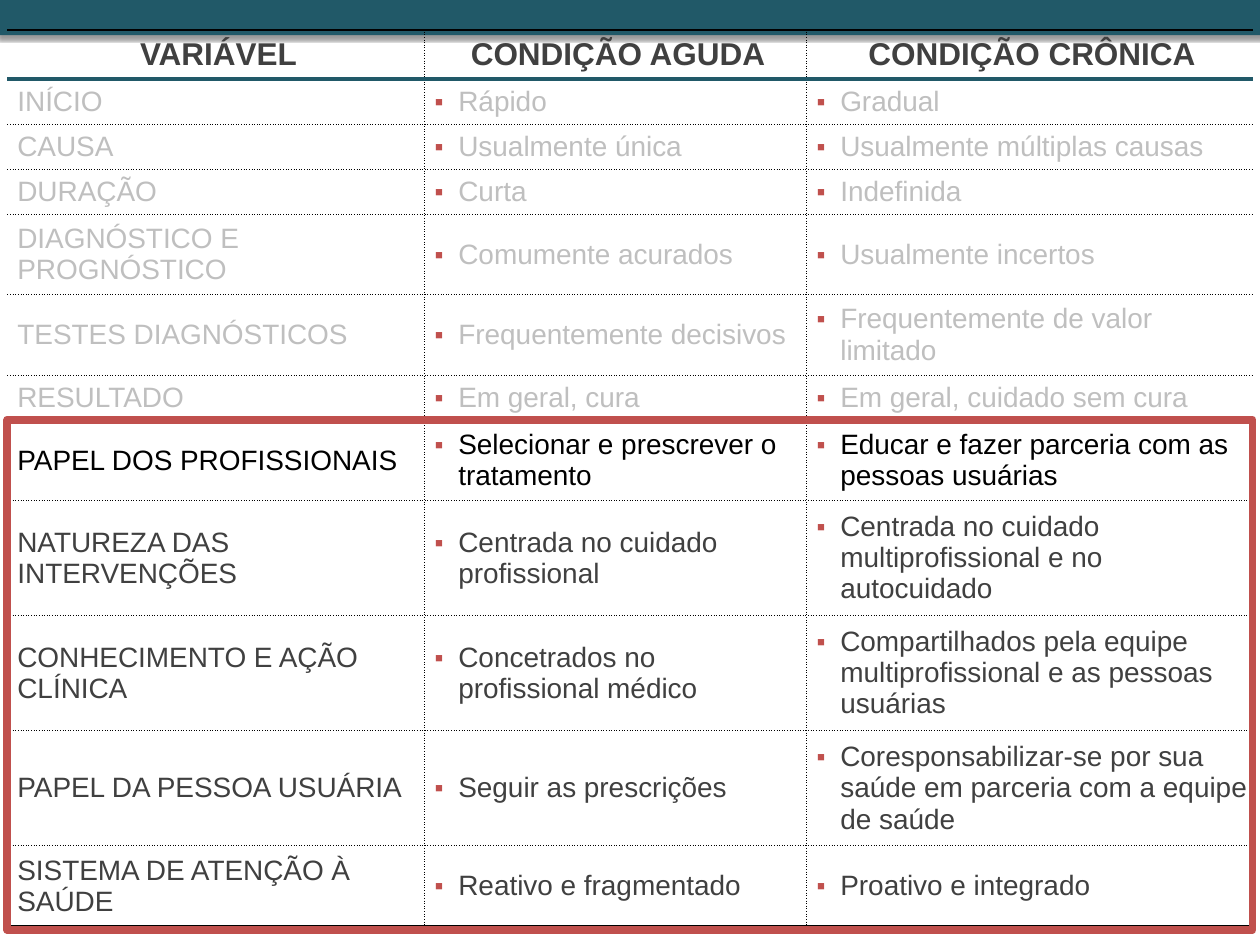
"""Build a slide comparing acute and chronic conditions in a highlighted table."""
from dataclasses import dataclass

from pptx import Presentation
from pptx.dml.color import RGBColor
from pptx.enum.shapes import MSO_SHAPE
from pptx.enum.text import MSO_ANCHOR, PP_ALIGN
from pptx.oxml import parse_xml
from pptx.oxml.ns import nsdecls
from pptx.util import Cm, Pt

TEAL = RGBColor(0x21, 0x59, 0x68)
RED = RGBColor(0xC0, 0x50, 0x4D)
BLACK = RGBColor(0x00, 0x00, 0x00)
DARK_GREY = RGBColor(0x40, 0x40, 0x40)
LIGHT_GREY = RGBColor(0xBF, 0xBF, 0xBF)

FONT = "Arial"
ONE_LINE, TWO_LINES, THREE_LINES = Cm(0.91), Cm(1.62), Cm(2.32)
COLUMN_WIDTHS = (Cm(8.41), Cm(7.7), Cm(8.99))
TABLE_LEFT, TABLE_TOP, TABLE_WIDTH = Cm(0.15), Cm(0.6), Cm(25.1)
BULLET_INDENT = Cm(0.48)


@dataclass(frozen=True)
class Edge:
    color: RGBColor
    width: Pt
    dash: str = "solid"


@dataclass(frozen=True)
class Row:
    variable: str
    acute: str
    chronic: str
    height: Cm = ONE_LINE
    color: RGBColor = DARK_GREY
    header: bool = False


DOTTED = Edge(BLACK, Pt(0.5), "sysDot")
OUTER = Edge(BLACK, Pt(1))
HEADER_RULE = Edge(TEAL, Pt(3))

ROWS = (
    Row("VARIÁVEL", "CONDIÇÃO AGUDA", "CONDIÇÃO CRÔNICA", Cm(0.99), header=True),
    Row("INÍCIO", "Rápido", "Gradual", color=LIGHT_GREY),
    Row("CAUSA", "Usualmente única", "Usualmente múltiplas causas", color=LIGHT_GREY),
    Row("DURAÇÃO", "Curta", "Indefinida", color=LIGHT_GREY),
    Row("DIAGNÓSTICO E PROGNÓSTICO", "Comumente acurados", "Usualmente incertos",
        TWO_LINES, LIGHT_GREY),
    Row("TESTES DIAGNÓSTICOS", "Frequentemente decisivos", "Frequentemente de valor limitado",
        TWO_LINES, LIGHT_GREY),
    Row("RESULTADO", "Em geral, cura", "Em geral, cuidado sem cura", color=LIGHT_GREY),
    Row("PAPEL DOS PROFISSIONAIS", "Selecionar e prescrever o tratamento",
        "Educar e fazer parceria com as pessoas usuárias", TWO_LINES, BLACK),
    Row("NATUREZA DAS INTERVENÇÕES", "Centrada no cuidado profissional",
        "Centrada no cuidado multiprofissional e no autocuidado", THREE_LINES),
    Row("CONHECIMENTO E AÇÃO CLÍNICA", "Concetrados no profissional médico",
        "Compartilhados pela equipe multiprofissional e as pessoas usuárias", THREE_LINES),
    Row("PAPEL DA PESSOA USUÁRIA", "Seguir as prescrições",
        "Coresponsabilizar-se por sua saúde em parceria com a equipe de saúde", THREE_LINES),
    Row("SISTEMA DE ATENÇÃO À SAÚDE", "Reativo e fragmentado", "Proativo e integrado", TWO_LINES),
)


def draw_rectangle(slide, left: Cm, top: Cm, width: Cm, height: Cm,
                   fill: RGBColor | None = None, edge: Edge | None = None):
    """Draw a rectangle with an optional fill and outline."""
    box = slide.shapes.add_shape(MSO_SHAPE.RECTANGLE, left, top, width, height)
    box.shadow.inherit = False
    if fill is None:
        box.fill.background()
    else:
        box.fill.solid()
        box.fill.fore_color.rgb = fill
    if edge is None:
        box.line.fill.background()
    else:
        box.line.color.rgb = edge.color
        box.line.width = edge.width
        box.line._get_or_add_ln().append(parse_xml(f"<a:round {nsdecls('a')}/>"))
    return box


def draw_top_band(slide) -> None:
    """Draw the shadowed band and its translucent upper strip."""
    band = draw_rectangle(slide, Cm(-0.05), Cm(0), Cm(25.5), Cm(0.71), TEAL)
    effects = band._element.spPr.find("{*}effectLst")
    effects.append(parse_xml(
        f'<a:outerShdw {nsdecls("a")} blurRad="{Pt(2)}" dist="{Pt(2)}" dir="5400000" rotWithShape="0">'
        f'<a:srgbClr val="{BLACK}"><a:alpha val="40000"/></a:srgbClr></a:outerShdw>'))
    strip = draw_rectangle(slide, Cm(0), Cm(0), Cm(25.4), Cm(0.51), TEAL)
    color = strip._element.spPr.find("{*}solidFill/{*}srgbClr")
    color.append(parse_xml(f'<a:alpha {nsdecls("a")} val="90000"/>'))


def write_text(frame, text: str, *, size: Pt, color: RGBColor, bold: bool = False,
               align: PP_ALIGN = PP_ALIGN.LEFT, bullet: bool = False) -> None:
    """Write one formatted paragraph into a text frame."""
    para = frame.paragraphs[0]
    para.alignment = align
    span = para.add_run()
    span.text = text
    span.font.name = FONT
    span.font.size = size
    span.font.bold = bold
    span.font.color.rgb = color
    if bullet:
        properties = para._p.get_or_add_pPr()
        properties.set("marL", str(BULLET_INDENT))
        properties.set("indent", str(-BULLET_INDENT))
        for markup in (f'<a:buClr {nsdecls("a")}><a:srgbClr val="{RED}"/></a:buClr>',
                       f'<a:buSzPct {nsdecls("a")} val="90000"/>',
                       f'<a:buFont {nsdecls("a")} typeface="{FONT}"/>',
                       f'<a:buChar {nsdecls("a")} char="▪"/>'):
            properties.append(parse_xml(markup))


def set_border(cell, side: str, edge: Edge | None) -> None:
    """Set one side of a cell border, or clear it."""
    if edge is None:
        markup = f'<a:ln{side} {nsdecls("a")} w="0"><a:noFill/></a:ln{side}>'
    else:
        markup = (f'<a:ln{side} {nsdecls("a")} w="{edge.width}"><a:solidFill>'
                  f'<a:srgbClr val="{edge.color}"/></a:solidFill>'
                  f'<a:prstDash val="{edge.dash}"/></a:ln{side}>')
    cell._tc.get_or_add_tcPr().append(parse_xml(markup))


def draw_table(slide, rows: tuple[Row, ...]) -> None:
    """Draw the comparison table."""
    height = sum(row.height for row in rows)
    table = slide.shapes.add_table(len(rows), len(COLUMN_WIDTHS), TABLE_LEFT, TABLE_TOP,
                                   TABLE_WIDTH, height).table
    table.horz_banding = False
    for column, width in zip(table.columns, COLUMN_WIDTHS):
        column.width = width
    horizontal_edges = [OUTER, HEADER_RULE, *[DOTTED] * (len(rows) - 2), OUTER]
    vertical_edges = [None, *[DOTTED] * (len(COLUMN_WIDTHS) - 1), None]
    for row_index, row in enumerate(rows):
        table.rows[row_index].height = row.height
        for column_index, text in enumerate((row.variable, row.acute, row.chronic)):
            cell = table.cell(row_index, column_index)
            cell.vertical_anchor = MSO_ANCHOR.MIDDLE
            cell.margin_left = Cm(0.2)
            cell.margin_right = cell.margin_top = cell.margin_bottom = Cm(0.1)
            set_border(cell, "L", vertical_edges[column_index])
            set_border(cell, "R", vertical_edges[column_index + 1])
            set_border(cell, "T", horizontal_edges[row_index])
            set_border(cell, "B", horizontal_edges[row_index + 1])
            cell.fill.background()
            write_text(cell.text_frame, text, color=row.color, bold=row.header,
                       size=Pt(18) if row.header else Pt(16),
                       align=PP_ALIGN.CENTER if row.header else PP_ALIGN.LEFT,
                       bullet=column_index > 0 and not row.header)


def main() -> None:
    """Build and save the deck."""
    deck = Presentation()
    deck.slide_width, deck.slide_height = Cm(25.4), Cm(19.05)
    page = deck.slides.add_slide(deck.slide_layouts[6])
    draw_top_band(page)
    draw_table(page, ROWS)
    draw_rectangle(page, TABLE_LEFT, Cm(8.46), TABLE_WIDTH, Cm(10.29), edge=Edge(RED, Pt(4.5)))
    deck.save("out.pptx")


if __name__ == "__main__":
    main()
